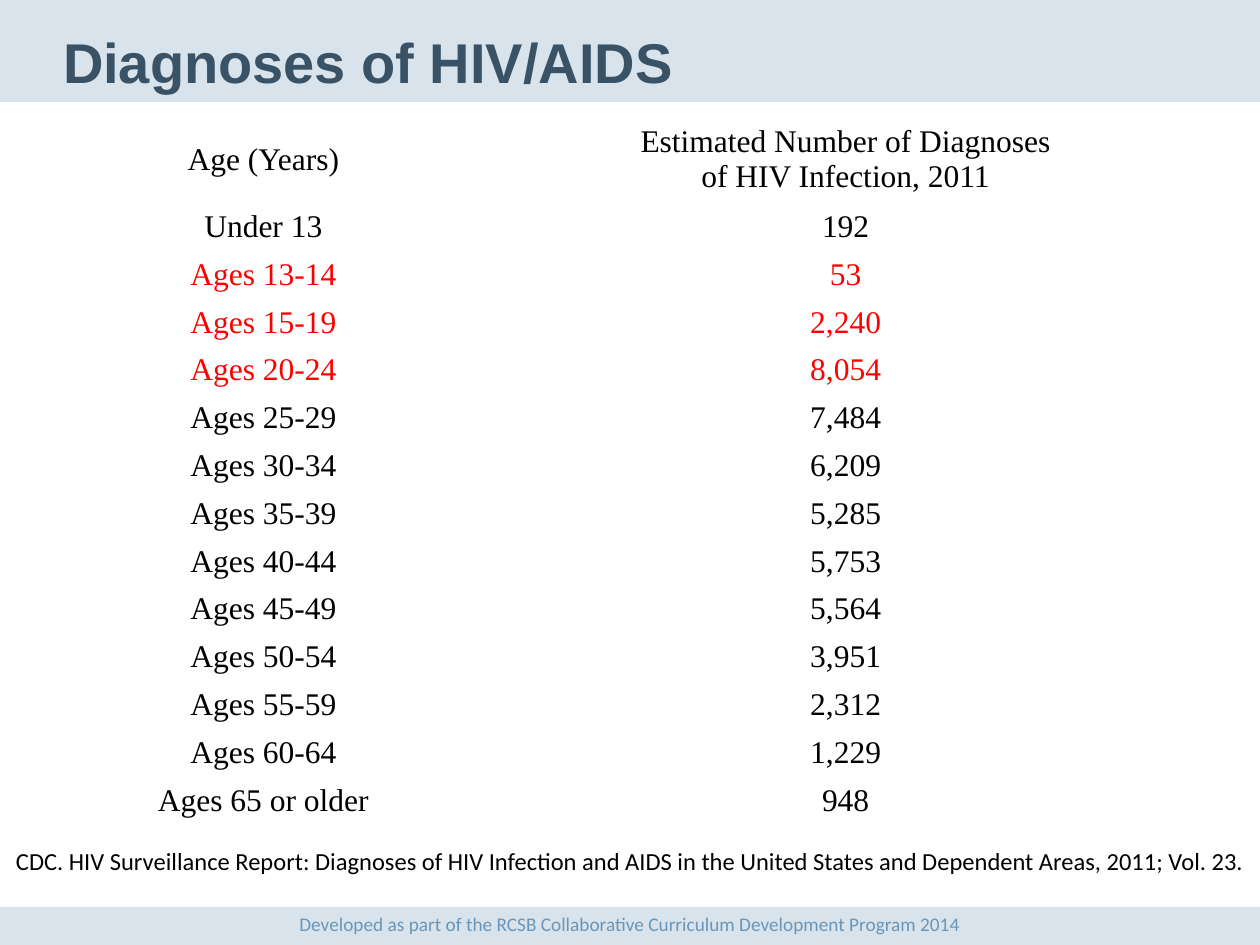
"""Build the slide of HIV diagnoses by age group."""

from dataclasses import dataclass

from lxml.etree import SubElement
from pptx import Presentation
from pptx.dml.color import RGBColor
from pptx.enum.shapes import MSO_SHAPE
from pptx.enum.text import MSO_ANCHOR, PP_ALIGN
from pptx.oxml.ns import qn
from pptx.util import Pt

TITLE = "Diagnoses of HIV/AIDS"
HEADER = ("Age (Years)", "Estimated Number of Diagnoses\vof HIV Infection, 2011")
DIAGNOSES = [
    ("Under 13", "192"),
    ("Ages 13-14", "53"),
    ("Ages 15-19", "2,240"),
    ("Ages 20-24", "8,054"),
    ("Ages 25-29", "7,484"),
    ("Ages 30-34", "6,209"),
    ("Ages 35-39", "5,285"),
    ("Ages 40-44", "5,753"),
    ("Ages 45-49", "5,564"),
    ("Ages 50-54", "3,951"),
    ("Ages 55-59", "2,312"),
    ("Ages 60-64", "1,229"),
    ("Ages 65 or older", "948"),
]
HIGHLIGHTED_AGES = {"Ages 13-14", "Ages 15-19", "Ages 20-24"}
CITATION = (
    "CDC. HIV Surveillance Report: Diagnoses of HIV Infection and AIDS "
    "in the United States and Dependent Areas, 2011; Vol. 23."
)
CREDIT = "Developed as part of the RCSB Collaborative Curriculum Development Program 2014"

SLIDE_WIDTH, SLIDE_HEIGHT = 720, 540
BANDS = [(0, 58.3), (518.4, 21.6)]
COLUMN_WIDTHS = (265, 400.5)
HEADER_HEIGHT, ROW_HEIGHT = 49.7, 27.34


@dataclass(frozen=True)
class Theme:
    """Colours, fonts and type sizes."""

    accent: RGBColor = RGBColor.from_string("6B96B7")
    title: RGBColor = RGBColor.from_string("3A5265")
    text: RGBColor = RGBColor.from_string("000000")
    highlight: RGBColor = RGBColor.from_string("FF0000")
    band_opacity: int = 26
    title_font: str = "Arial"
    table_font: str = "Times New Roman"
    note_font: str = "Calibri"
    title_size: int = 32
    table_size: int = 18
    citation_size: int = 14
    credit_size: int = 11


THEME = Theme()


def style(paragraph, font_name, size, color, alignment=PP_ALIGN.LEFT, bold=False):
    paragraph.alignment = alignment
    font = paragraph.font
    font.name, font.size, font.bold = font_name, Pt(size), bold
    font.color.rgb = color


def place(shape, left, top, width, height):
    shape.left, shape.top = Pt(left), Pt(top)
    shape.width, shape.height = Pt(width), Pt(height)


def add_band(slide, top, height):
    band = slide.shapes.add_shape(
        MSO_SHAPE.RECTANGLE, 0, Pt(top), Pt(SLIDE_WIDTH), Pt(height)
    )
    band.shadow.inherit = False
    band.line.fill.background()
    band.fill.solid()
    band.fill.fore_color.rgb = THEME.accent
    color = band.fill._xPr.find(qn("a:solidFill"))[0]
    SubElement(color, qn("a:alpha"), val=str(THEME.band_opacity * 1000))
    slide.shapes._spTree.insert(2, band._element)


def add_title(slide):
    title = slide.shapes.title
    place(title, 28.8, 11.5, 643, 46.8)
    title.text_frame.text = TITLE
    title.text_frame.vertical_anchor = MSO_ANCHOR.MIDDLE
    style(title.text_frame.paragraphs[0], THEME.title_font, THEME.title_size,
          THEME.title, bold=True)


def add_diagnosis_table(slide):
    rows = [HEADER, *DIAGNOSES]
    table = slide.shapes.add_table(
        len(rows), len(HEADER), Pt(18), Pt(66.2), Pt(sum(COLUMN_WIDTHS)),
        Pt(HEADER_HEIGHT + ROW_HEIGHT * len(DIAGNOSES)),
    ).table
    table.first_row = table.horz_banding = False
    for column, width in zip(table.columns, COLUMN_WIDTHS):
        column.width = Pt(width)
    for index, values in enumerate(rows):
        table.rows[index].height = Pt(ROW_HEIGHT if index else HEADER_HEIGHT)
        color = THEME.highlight if values[0] in HIGHLIGHTED_AGES else THEME.text
        for cell, value in zip(table.rows[index].cells, values):
            cell.fill.background()
            cell.vertical_anchor = MSO_ANCHOR.MIDDLE
            cell.margin_left = cell.margin_right = Pt(7.9)
            cell.margin_top = cell.margin_bottom = Pt(2.2)
            cell.text = value
            style(cell.text_frame.paragraphs[0], THEME.table_font,
                  THEME.table_size, color, PP_ALIGN.CENTER)


def add_note(slide, text, box, size, color, alignment, anchor, wrap):
    frame = slide.shapes.add_textbox(*map(Pt, box)).text_frame
    frame.word_wrap = wrap
    frame.vertical_anchor = anchor
    frame.text = text
    style(frame.paragraphs[0], THEME.note_font, size, color, alignment)


def main():
    presentation = Presentation()
    presentation.slide_width = Pt(SLIDE_WIDTH)
    presentation.slide_height = Pt(SLIDE_HEIGHT)
    slide = presentation.slides.add_slide(presentation.slide_layouts[5])
    for top, height in BANDS:
        add_band(slide, top, height)
    add_title(slide)
    add_diagnosis_table(slide)
    add_note(slide, CREDIT, (0, 517.7, SLIDE_WIDTH, 20.9), THEME.credit_size,
             THEME.accent, PP_ALIGN.CENTER, MSO_ANCHOR.MIDDLE, True)
    add_note(slide, CITATION, (2, 480.2, 718, 24.5), THEME.citation_size,
             THEME.text, PP_ALIGN.LEFT, MSO_ANCHOR.TOP, False)
    presentation.save("out.pptx")


if __name__ == "__main__":
    main()
